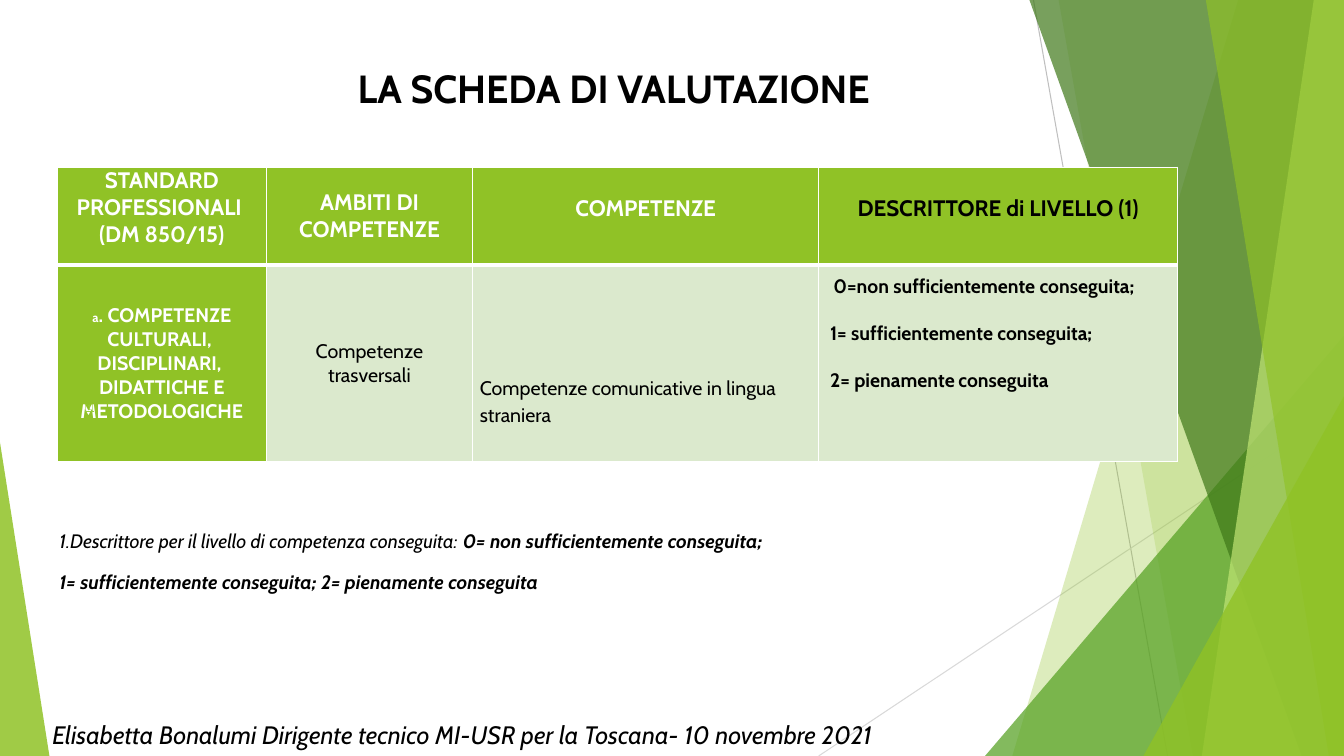
from lxml import etree
from pptx import Presentation
from pptx import util as u
from pptx.dml.color import RGBColor
from pptx.enum import shapes, text
from pptx.oxml.ns import qn

PX = 9144
WIDTH, HEIGHT = 1333, 750
COLORS = {
    "black": "000000", "white": "FFFFFF", "lime": "90C226", "green": "54A021",
    "forest": "3F7819", "pale": "C0E474", "mint": "DBE9CD", "link": "99CA3C",
    "gray": "BFBFBF", "silver": "D9D9D9",
}
CENTER, JUSTIFY = text.PP_ALIGN.CENTER, text.PP_ALIGN.JUSTIFY
TOP, MIDDLE = text.MSO_ANCHOR.TOP, text.MSO_ANCHOR.MIDDLE


def color(name):
    return RGBColor.from_string(COLORS[name])


class SlideBuilder:
    font = "Cabin"

    def __init__(self, presentation):
        self.slide = presentation.slides.add_slide(presentation.slide_layouts[5])
        self.shapes = self.slide.shapes

    def px(self, *lengths):
        return [u.Emu(length * PX) for length in lengths]

    def line(self, start, end, name):
        connector = self.shapes.add_connector(
            shapes.MSO_CONNECTOR.STRAIGHT, *self.px(*start, *end))
        connector.line.color.rgb = color(name)
        connector.line.width = u.Pt(0.75)
        etree.SubElement(connector._element.spPr, qn("a:effectLst"))

    def paint(self, shape, name, opacity):
        shape.shadow.inherit = False
        shape.line.fill.background()
        shape.fill.solid()
        shape.fill.fore_color.rgb = color(name)
        tint = shape._element.spPr.find(".//" + qn("a:srgbClr"))
        etree.SubElement(tint, qn("a:alpha"), val=str(opacity * 1000))

    def band(self, top_left, bottom_left, name, opacity):
        builder = self.shapes.build_freeform(top_left, 0, scale=PX)
        builder.add_line_segments(
            [(WIDTH, 0), (WIDTH, HEIGHT), (bottom_left, HEIGHT)])
        self.paint(builder.convert_to_shape(), name, opacity)

    def triangle(self, box, apex, name, opacity):
        shape = self.shapes.add_shape(
            shapes.MSO_SHAPE.ISOSCELES_TRIANGLE, *self.px(*box))
        shape.adjustments[0] = apex
        self.paint(shape, name, opacity)

    def paragraphs(self, frame, paragraphs, align=None, spacing=None):
        for index, runs in enumerate(paragraphs):
            paragraph = frame.add_paragraph() if index else frame.paragraphs[0]
            paragraph.alignment = align
            paragraph.line_spacing = spacing
            for words, style in runs:
                self.run(paragraph, words, **style)

    def run(self, paragraph, words, size, ink="black", bold=False,
            italic=False, underline=False, raised=False, font=None):
        run = paragraph.add_run()
        run.text = words
        run.font.name = font or self.font
        run.font.size = u.Pt(size)
        run.font.color.rgb = color(ink)
        run.font.bold, run.font.italic = bold, italic
        run.font.underline = underline
        if raised:
            run._r.get_or_add_rPr().set("baseline", "30000")

    def title(self, box, runs):
        title = self.shapes.title
        title.left, title.top, title.width, title.height = self.px(*box)
        title.text_frame.auto_size = text.MSO_AUTO_SIZE.NONE
        title.text_frame.vertical_anchor = TOP
        self.paragraphs(title.text_frame, [runs], CENTER)
        self.shapes._spTree.append(title._element)

    def textbox(self, box, paragraphs, align=None, anchor=TOP, wrap=True, top=5):
        frame = self.shapes.add_textbox(*self.px(*box)).text_frame
        frame.word_wrap = wrap
        frame.vertical_anchor = anchor
        frame.margin_top = self.px(top)[0]
        self.paragraphs(frame, paragraphs, align)

    def table(self, box, widths, heights, rows):
        table = self.shapes.add_table(
            len(heights), len(widths), *self.px(*box)).table
        for column, width in zip(table.columns, self.px(*widths)):
            column.width = width
        for row, height in zip(table.rows, self.px(*heights)):
            row.height = height
        for row, contents in enumerate(rows):
            for column, content in enumerate(contents):
                self.cell(table.cell(row, column), row == 0, **content)

    def cell(self, cell, header, paragraphs, fill="lime", align=CENTER,
             anchor=TOP, top=0, spacing=None):
        cell.margin_left, cell.margin_right = self.px(7, 7)
        cell.margin_top, cell.margin_bottom = self.px(top, 0)
        cell.vertical_anchor = anchor
        cell.fill.solid()
        cell.fill.fore_color.rgb = color(fill)
        properties = cell._tc.get_or_add_tcPr()
        for index, side in enumerate("LRTB"):
            thick = side == ("B" if header else "T")
            border = etree.Element(qn("a:ln" + side), w=str(u.Pt(3 if thick else 1)))
            solid = etree.SubElement(border, qn("a:solidFill"))
            etree.SubElement(solid, qn("a:srgbClr"), val=COLORS["white"])
            properties.insert(index, border)
        self.paragraphs(cell.text_frame, paragraphs, align, spacing)


def add_backdrop(builder):
    builder.line((1025, 0), (1158, HEIGHT), "gray")
    builder.line((WIDTH, 403), (812, HEIGHT), "silver")
    builder.band(1228, 1004, "lime", 30)
    builder.band(1050, 1183, "lime", 20)
    builder.triangle((977, 333, 356, 417), 1, "green", 72)
    builder.band(1021, 1291, "forest", 70)
    builder.band(1303, 1192, "pale", 70)
    builder.band(1196, 1318, "lime", 65)
    builder.triangle((1134, 393, 199, 357), 1, "lime", 80)
    builder.triangle((0, 439, 49, 311), 0, "lime", 85)


def add_evaluation_table(builder):
    head = dict(size=16, ink="white", bold=True)
    standard = dict(size=14, ink="white", bold=True)
    plain = dict(size=14)
    level = dict(size=24, bold=True, raised=True)
    headers = [
        dict(paragraphs=[[("STANDARD PROFESSIONALI ", head)],
                         [("(DM 850/15)", head)]]),
        dict(paragraphs=[[("AMBITI DI COMPETENZE", head)]], anchor=MIDDLE),
        dict(paragraphs=[[("COMPETENZE", head)]], top=27),
        dict(paragraphs=[[("DESCRITTORE di LIVELLO (1)",
                           dict(size=16, bold=True))]], top=27),
    ]
    skills = [
        dict(paragraphs=[
            [("a", dict(standard, size=9)), (". COMPETENZE CULTURALI, ", standard)],
            [("DISCIPLINARI, ", standard)],
            [("DIDATTICHE E METODOLOGICHE", standard)]], anchor=MIDDLE),
        dict(paragraphs=[[("Competenze trasversali", plain)]],
             fill="mint", anchor=MIDDLE),
        dict(paragraphs=[[("Competenze comunicative in lingua straniera", plain)]],
             fill="mint", align=None, top=107, spacing=1.15),
        dict(paragraphs=[
            [(" ", dict(size=24)), ("0=non sufficientemente conseguita;", level)],
            [(" 1= sufficientemente conseguita;", level)],
            [(" 2= pienamente", level), (" ", dict(level, size=18)),
             ("conseguita", level)]],
             fill="mint", align=None, spacing=1.15),
    ]
    builder.table((57, 166, 1111, 292), (207, 205, 343, 356), (97, 195),
                  [headers, skills])


def main():
    presentation = Presentation()
    presentation.slide_width = u.Emu(WIDTH * PX)
    presentation.slide_height = u.Emu(HEIGHT * PX)
    builder = SlideBuilder(presentation)
    add_backdrop(builder)
    builder.title((117, 59, 983, 104),
                  [("LA SCHEDA DI VALUTAZIONE", dict(size=28, bold=True))])
    add_evaluation_table(builder)
    builder.textbox((74, 392, 31, 27), [[("[1]", dict(
        size=10, ink="link", underline=True, raised=True, font="Calibri"))]],
        anchor=MIDDLE, wrap=False)
    note = dict(size=24, italic=True, raised=True)
    strong = dict(note, bold=True)
    builder.textbox((49, 476, 1152, 91), [
        [("1.Descrittore per il livello di competenza conseguita: ", note),
         ("0= non sufficientemente conseguita; ", strong)],
        [("1= sufficientemente conseguita; 2= pienamente conseguita", strong)],
    ], JUSTIFY, top=45)
    builder.textbox((42, 709, 1152, 40), [[(
        "Elisabetta Bonalumi Dirigente tecnico MI-USR per la Toscana- 10 novembre 2021",
        dict(size=18, italic=True))]])
    presentation.save("out.pptx")


if __name__ == "__main__":
    main()
